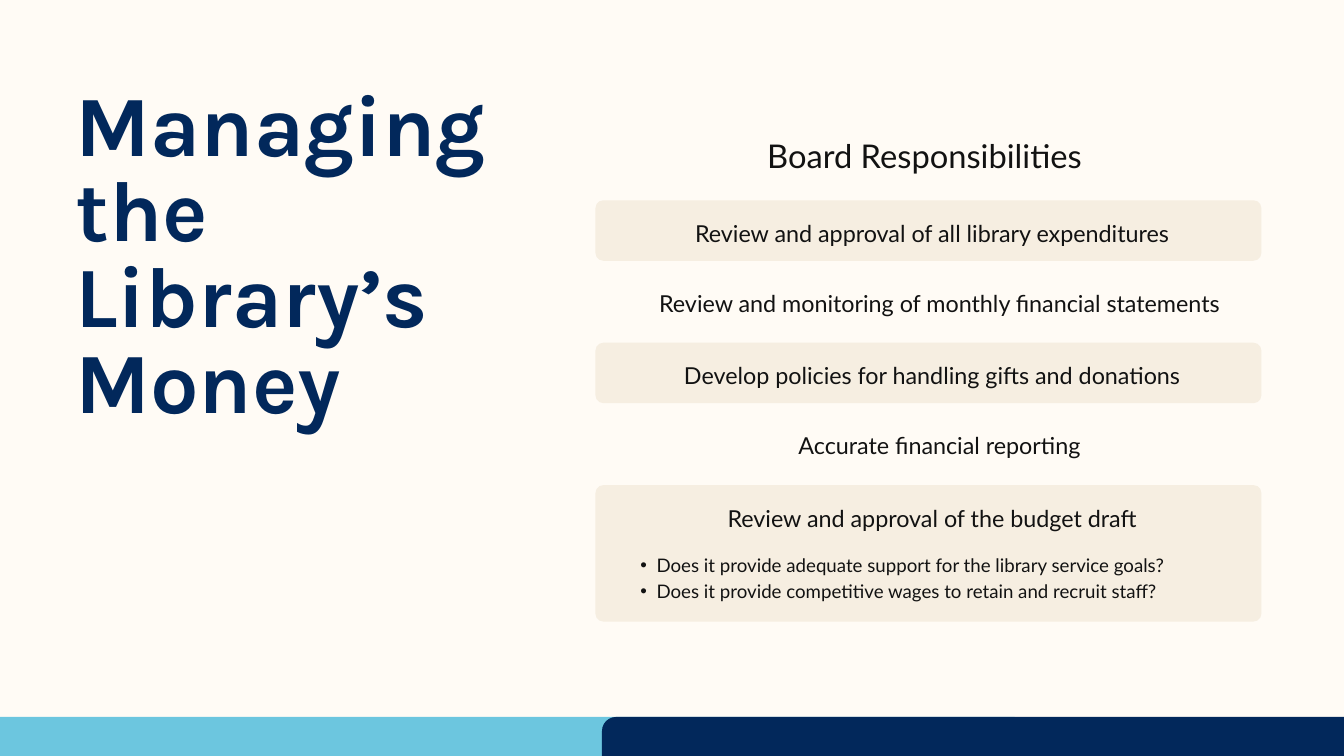
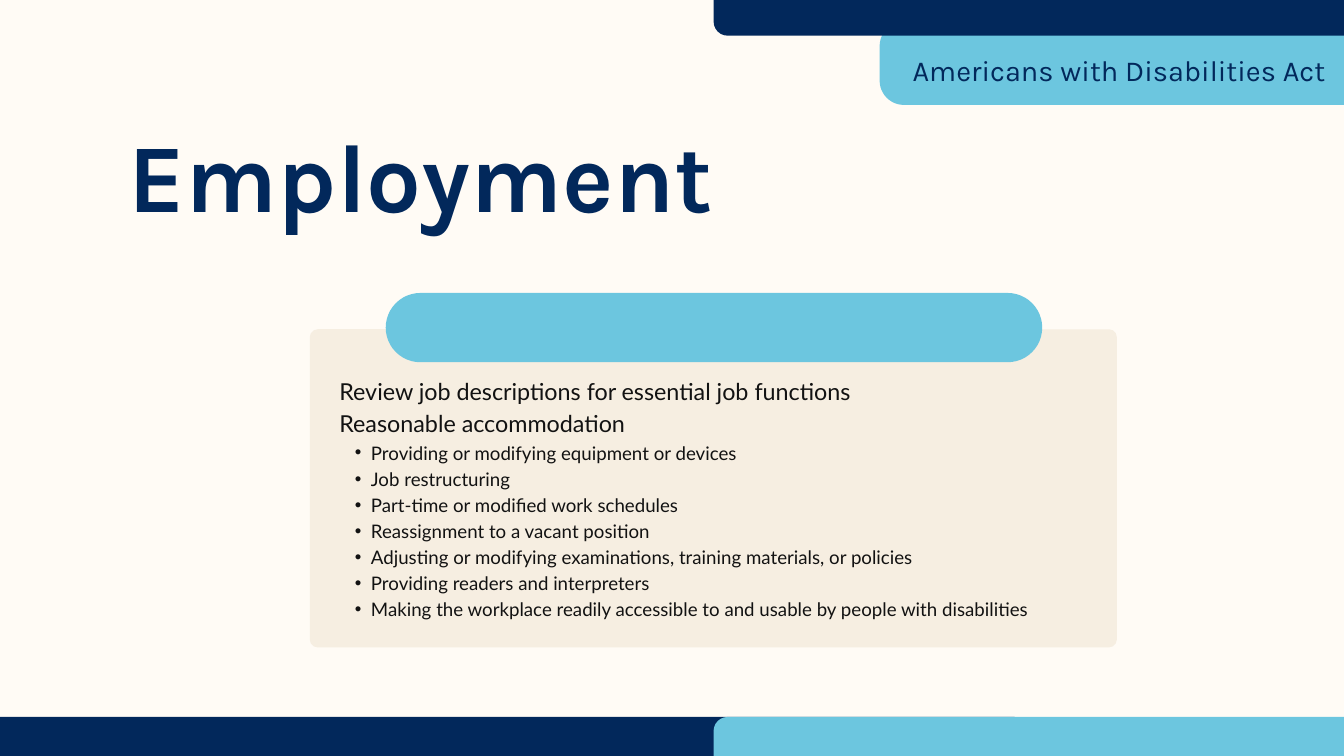
from collections import namedtuple
from dataclasses import dataclass

from lxml.etree import SubElement
from pptx import Presentation
from pptx.dml.color import RGBColor
from pptx.enum.shapes import MSO_SHAPE
from pptx.enum.text import MSO_ANCHOR, MSO_AUTO_SIZE, PP_ALIGN
from pptx.oxml.ns import qn
from pptx.util import Pt

TextStyle = namedtuple("TextStyle", "font size leading color bold", defaults=[False])


@dataclass(frozen=True)
class Theme:
    cream = RGBColor.from_string("FFFBF5")
    sand = RGBColor.from_string("F6EEE1")
    navy = RGBColor.from_string("02285B")
    sky = RGBColor.from_string("6CC6DF")
    ink = RGBColor.from_string("121212")
    title = TextStyle("Karla", 92, 92, navy, True)
    big_title = TextStyle("Karla", 104, 104, navy, True)
    tag = TextStyle("Karla", 31, 43.4, navy)
    heading = TextStyle("Lato", 35, 49, ink)
    item = TextStyle("Lato", 25, 35, ink)
    detail = TextStyle("Lato", 20, 28, ink)
    card_radius = 8.5
    bar_radius = 15
    bullet_margin = 33.84
    bullet_hang = 17.28


class Deck:
    def __init__(self, theme):
        self.theme = theme
        self.presentation = Presentation()
        self.presentation.slide_width = Pt(1440)
        self.presentation.slide_height = Pt(810)
        self.slide = None

    def new_slide(self):
        self.slide = self.presentation.slides.add_slide(self.presentation.slide_layouts[1])
        background = self.slide.background.fill
        background.solid()
        background.fore_color.rgb = self.theme.cream

    def block(self, left, top, width, height, color, radius=0):
        preset = MSO_SHAPE.ROUNDED_RECTANGLE if radius else MSO_SHAPE.RECTANGLE
        block = self.slide.shapes.add_shape(preset, Pt(left), Pt(top), Pt(width), Pt(height))
        if radius:
            block.adjustments[0] = radius / min(width, height)
        block.shadow.inherit = False
        block.fill.solid()
        block.fill.fore_color.rgb = color
        block.line.fill.background()

    def footer(self, band_color, tab_color, tab_left):
        self.block(-72.7, 768.2, 1160, 140.4, band_color)
        self.block(tab_left, 768.2, 1657.4 - tab_left, 112.3, tab_color, self.theme.bar_radius)

    def text(self, left, top, width, height, words, style, align=PP_ALIGN.LEFT):
        label = self.slide.shapes.add_textbox(Pt(left), Pt(top), Pt(width), Pt(height))
        self.prepare(label.text_frame)
        label.text_frame.text = words
        self.format(label.text_frame.paragraphs[0], style, align)

    def title(self, left, top, width, height, words, style, right_inset=0):
        title = self.slide.shapes.title
        self.place(title, left, top, width, height)
        title.text_frame.margin_right = Pt(right_inset)
        title.text_frame.text = words
        self.format(title.text_frame.paragraphs[0], style)

    def body(self, left, top, width, height, items, details, align=PP_ALIGN.LEFT, gap=0):
        body = self.slide.placeholders[1]
        self.place(body, left, top, width, height)
        body.text_frame.text = "\n".join(items + details)
        for index, paragraph in enumerate(body.text_frame.paragraphs):
            if index < len(items):
                self.indent(paragraph)
                self.format(paragraph, self.theme.item, align)
            else:
                paragraph.level = 1
                self.indent(paragraph, "•")
                before = gap if index == len(items) else 0
                self.format(paragraph, self.theme.detail, before=before)

    def place(self, placeholder, left, top, width, height):
        placeholder.left, placeholder.top = Pt(left), Pt(top)
        placeholder.width, placeholder.height = Pt(width), Pt(height)
        placeholder.element.getparent().append(placeholder.element)
        self.prepare(placeholder.text_frame)

    def prepare(self, frame):
        frame.word_wrap = True
        frame.auto_size = MSO_AUTO_SIZE.NONE
        frame.vertical_anchor = MSO_ANCHOR.TOP
        frame.margin_left = frame.margin_right = frame.margin_top = frame.margin_bottom = 0

    def indent(self, paragraph, bullet=None):
        properties = paragraph._p.get_or_add_pPr()
        margin = self.theme.bullet_margin if bullet else 0
        hang = self.theme.bullet_hang if bullet else 0
        properties.set("marL", str(Pt(margin)))
        properties.set("indent", str(-Pt(hang)))
        if bullet:
            SubElement(properties, qn("a:buFont")).set("typeface", "Arial")
            SubElement(properties, qn("a:buChar")).set("char", bullet)
        else:
            SubElement(properties, qn("a:buNone"))

    def format(self, paragraph, style, align=PP_ALIGN.LEFT, before=0):
        paragraph.alignment = align
        paragraph.line_spacing = Pt(style.leading)
        paragraph.space_before = Pt(before)
        paragraph.space_after = Pt(0)
        for run in paragraph.runs:
            run.font.name = style.font
            run.font.size = Pt(style.size)
            run.font.bold = style.bold
            run.font.color.rgb = style.color


def money_slide(deck):
    theme = deck.theme
    deck.new_slide()
    deck.footer(theme.sky, theme.navy, 645)
    deck.title(80.6, 93.6, 540.7, 370.8, "Managing the Library’s Money", theme.title, right_inset=50)
    deck.text(677.5, 138.2, 626.4, 46.8, "Board Responsibilities", theme.heading, PP_ALIGN.CENTER)

    duties = [
        "Review and approval of all library expenditures",
        "Review and monitoring of monthly financial statements",
        "Develop policies for handling gifts and donations",
        "Accurate financial reporting",
    ]
    first_top, pitch, text_offset = 214.6, 76.3, 15.1
    for row, duty in enumerate(duties):
        top = first_top + row * pitch
        if row % 2 == 0:
            deck.block(638, top, 713.5, 64.8, theme.sand, theme.card_radius)
            deck.text(669.6, top + text_offset, 658, 33, duty, theme.item, PP_ALIGN.CENTER)
        else:
            deck.text(677.5, top + text_offset - 1.4, 658, 33, duty, theme.item, PP_ALIGN.CENTER)

    budget_top = first_top + len(duties) * pitch
    deck.block(638, budget_top, 713.5, 146.2, theme.sand, theme.card_radius)
    deck.body(
        669.6, budget_top + text_offset, 658, 108.7,
        ["Review and approval of the budget draft"],
        [
            "Does it provide adequate support for the library service goals?",
            "Does it provide competitive wages to retain and recruit staff?",
        ],
        PP_ALIGN.CENTER,
        gap=19.6,
    )


def employment_slide(deck):
    theme = deck.theme
    deck.new_slide()
    deck.block(331.9, 352.8, 864.7, 340.9, theme.sand, theme.card_radius)
    deck.block(413.3, 313.9, 703.4, 74.2, theme.sky, 37.1)
    deck.footer(theme.navy, theme.sky, 764.6)
    deck.block(942.5, 23.4, 547.2, 89, theme.sky, 26)
    deck.block(764.6, -41, 862.6, 79.2, theme.navy, theme.bar_radius)
    deck.title(138.2, 144.7, 700.6, 108.7, "Employment", theme.big_title)
    deck.body(
        363.6, 398.9, 804.2, 262.8,
        ["Review job descriptions for essential job functions", "Reasonable accommodation"],
        [
            "Providing or modifying equipment or devices",
            "Job restructuring",
            "Part-time or modified work schedules",
            "Reassignment to a vacant position",
            "Adjusting or modifying examinations, training materials, or policies",
            "Providing readers and interpreters",
            "Making the workplace readily accessible to and usable by people with disabilities",
        ],
    )
    deck.text(977.8, 49.7, 548.6, 41.8, "Americans with Disabilities Act", theme.tag)


def main():
    deck = Deck(Theme())
    money_slide(deck)
    employment_slide(deck)
    deck.presentation.save("out.pptx")


if __name__ == "__main__":
    main()
